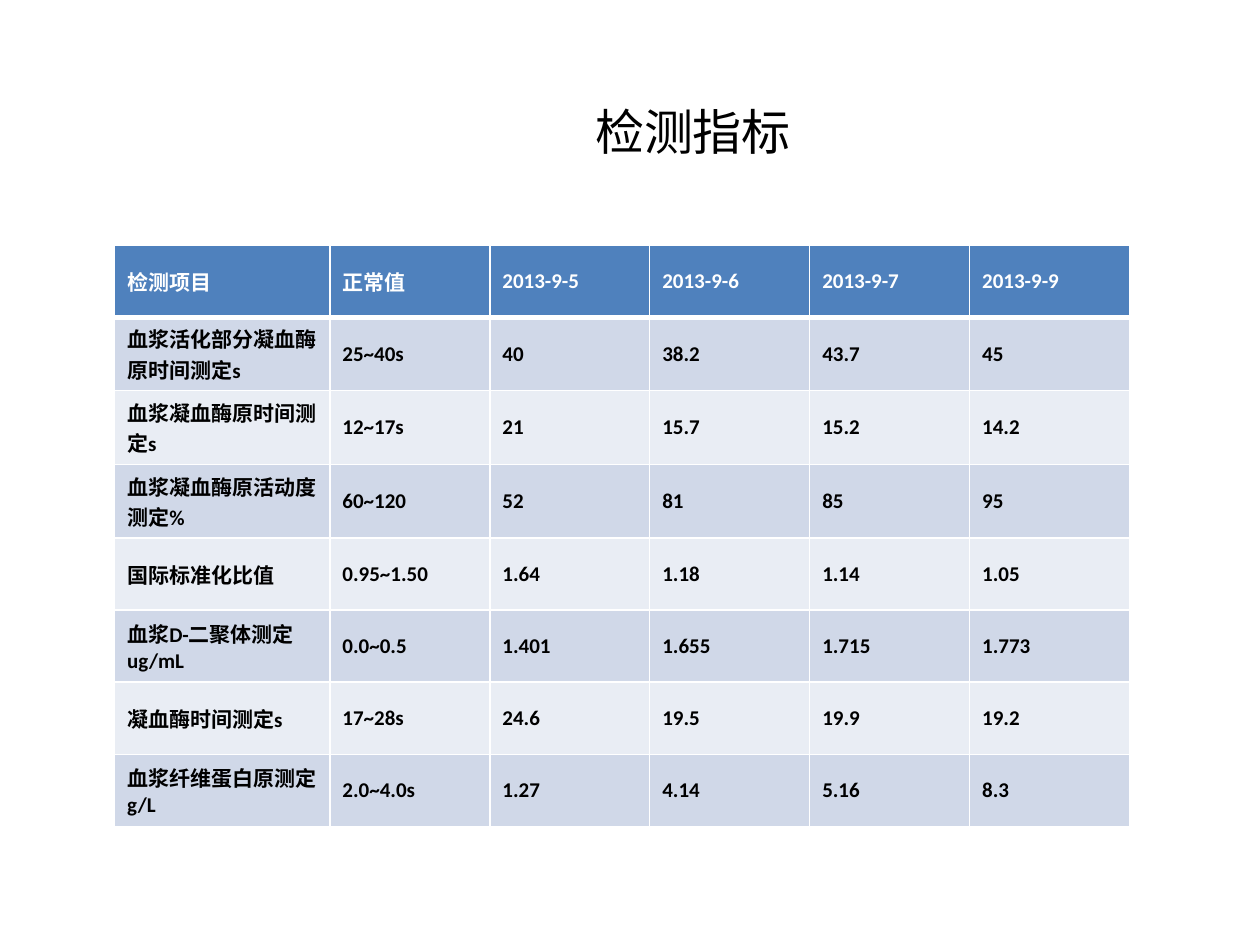
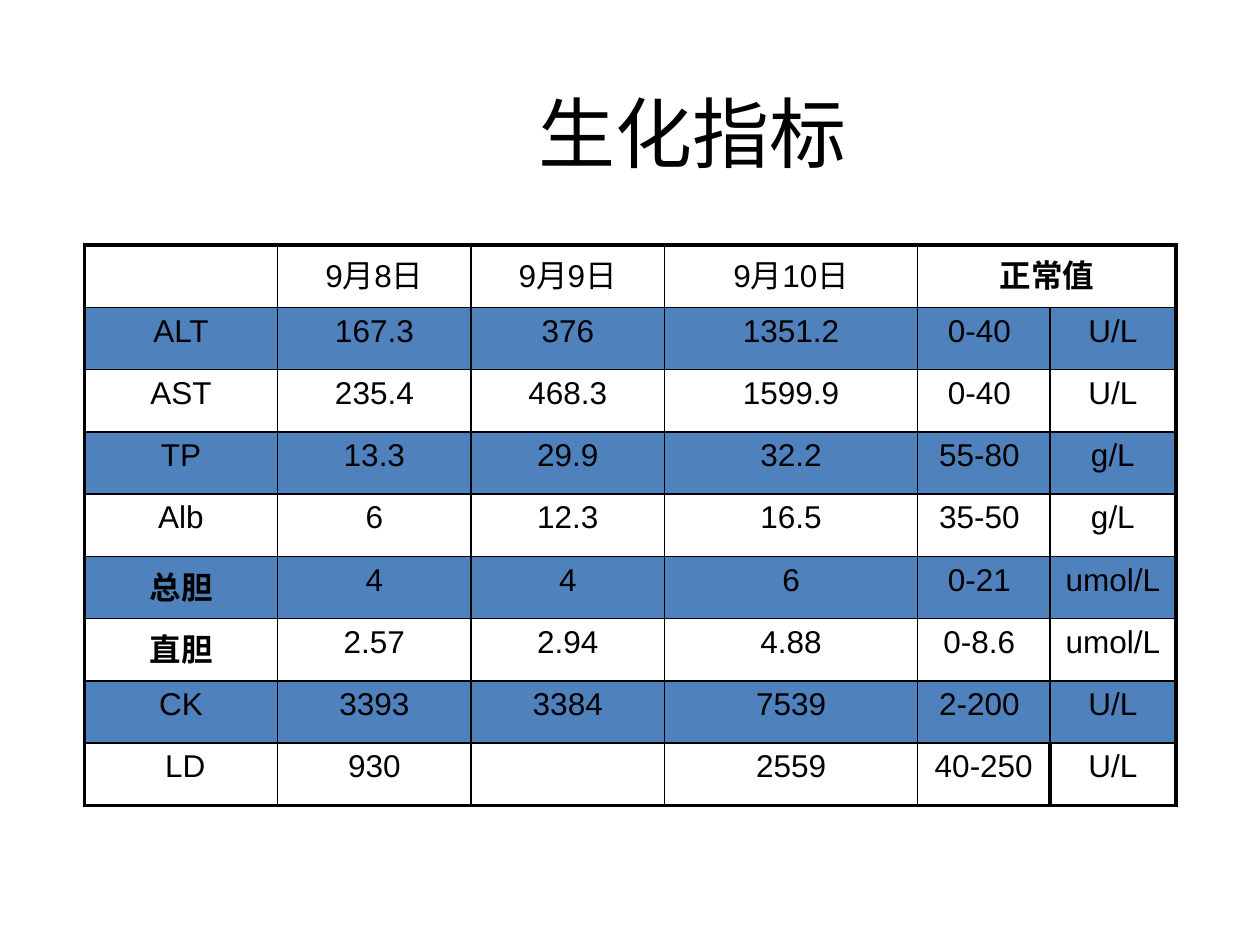
"""Build two slides of laboratory results, each a title over a table."""
from lxml import etree
from pptx import Presentation
from pptx.dml.color import RGBColor
from pptx.enum import text as tx
from pptx.oxml import ns
from pptx.util import Pt

BLACK, WHITE, BLUE = "000000", "FFFFFF", "4F81BD"
BANDS = ["D0D8E8", "E9EDF4"]
MID, TOP = tx.MSO_ANCHOR.MIDDLE, tx.MSO_ANCHOR.TOP
LEFT, MIDDLE = tx.PP_ALIGN.LEFT, tx.PP_ALIGN.CENTER

CLOTTING = [
    ["检测项目", "正常值", "2013-9-5", "2013-9-6", "2013-9-7", "2013-9-9"],
    ["血浆活化部分凝血酶原时间测定s", "25~40s", "40", "38.2", "43.7", "45"],
    ["血浆凝血酶原时间测定s", "12~17s", "21", "15.7", "15.2", "14.2"],
    ["血浆凝血酶原活动度测定%", "60~120", "52", "81", "85", "95"],
    ["国际标准化比值", "0.95~1.50", "1.64", "1.18", "1.14", "1.05"],
    ["血浆D-二聚体测定ug/mL", "0.0~0.5", "1.401", "1.655", "1.715", "1.773"],
    ["凝血酶时间测定s", "17~28s", "24.6", "19.5", "19.9", "19.2"],
    ["血浆纤维蛋白原测定g/L", "2.0~4.0s", "1.27", "4.14", "5.16", "8.3"],
]
SERUM = [
    ["", "9月8日", "9月9日", "9月10日", "正常值", ""],
    ["ALT", "167.3", "376", "1351.2", "0-40 ", "U/L"],
    ["AST", "235.4", "468.3", "1599.9", "0-40 ", "U/L"],
    ["TP", "13.3", "29.9", "32.2", "55-80 ", "g/L"],
    ["Alb", "6", "12.3", "16.5", "35-50 ", "g/L"],
    ["总胆", "4", "4", "6", "0-21 ", "umol/L"],
    ["直胆", "2.57", "2.94", "4.88", "0-8.6 ", "umol/L"],
    ["CK", "3393", "3384", "7539", "2-200 ", "U/L"],
    [" LD", "930", "", "2559", "40-250", "U/L"],
]
STRONG = {"正常值", "总胆", "直胆"}


def paint(hue):
    return RGBColor.from_string(hue)


def write(frame, words, size=18, face="Calibri", hue=BLACK, bold=False, align=LEFT):
    para = frame.paragraphs[0]
    para.alignment = align
    if not words:
        return
    run = para.add_run()
    run.text = words
    font = run.font
    font.size, font.name, font.bold = Pt(size), face, bold
    font.color.rgb = paint(hue)


def start(deck, words, size):
    slide = deck.slides.add_slide(deck.slide_layouts[5])
    title = slide.shapes.title
    title.left, title.top, title.width, title.height = map(Pt, (120, 15, 552, 120))
    title.text_frame.vertical_anchor = MID
    write(title.text_frame, words, size=size, align=MIDDLE)
    return slide


def edge(cell, hue, **widths):
    props = cell._tc.get_or_add_tcPr()
    for side in "LRTB":
        line = etree.SubElement(props, ns.qn(f"a:ln{side}"), w=str(Pt(widths[side])))
        fill = etree.SubElement(line, ns.qn("a:solidFill"))
        etree.SubElement(fill, ns.qn("a:srgbClr"), val=hue)


def grid(slide, data, left, wides, high, style):
    """Add a table; style(row, col) gives fill, line hue, line widths, anchor and font."""
    frame = slide.shapes.add_table(len(data), len(wides), Pt(left), Pt(140),
                                   Pt(sum(wides)), Pt(high * len(data)))
    table = frame.table
    table.first_row = table.horz_banding = False
    for col, wide in zip(table.columns, wides):
        col.width = Pt(wide)
    for r, row in enumerate(data):
        table.rows[r].height = Pt(high)
        for c, words in enumerate(row):
            cell = table.cell(r, c)
            fill, hue, widths, anchor, font = style(r, c)
            edge(cell, hue, **widths)
            if fill:
                cell.fill.solid()
                cell.fill.fore_color.rgb = paint(fill)
            else:
                cell.fill.background()
            cell.vertical_anchor = anchor
            write(cell.text_frame, words, **font)
    return table


def banded(r, c):
    fill = BANDS[(r - 1) % 2] if r else BLUE
    widths = dict(L=1, R=1, T=3 if r == 1 else 1, B=1 if r else 3)
    return fill, WHITE, widths, MID, dict(size=12, bold=True, hue=BLACK if r else WHITE)


def boxed(r, c):
    last = len(SERUM) - 1
    heavy = dict(L=c == 0 or (r, c) == (last, 5),
                 R=c == 5 or (r, c) in [(0, 4), (last, 4)],
                 T=r == 0, B=r == last)
    widths = {side: 2.25 if on else 1 for side, on in heavy.items()}
    font = dict(face="Arial", align=MIDDLE, bold=SERUM[r][c] in STRONG)
    return BLUE if r % 2 else None, BLACK, widths, TOP, font


def main():
    deck = Presentation()
    deck.slide_width, deck.slide_height = Pt(720), Pt(540)
    slide = start(deck, "检测指标", 28)
    grid(slide, CLOTTING, 65.5, [123] + [91.4] * 5, 41.25, banded)
    slide = start(deck, "生化指标", 44)
    table = grid(slide, SERUM, 48.2, [110.5] * 3 + [144.7, 75.6, 72], 35.6, boxed)
    table.cell(0, 4).merge(table.cell(0, 5))
    deck.save("out.pptx")


if __name__ == "__main__":
    main()
